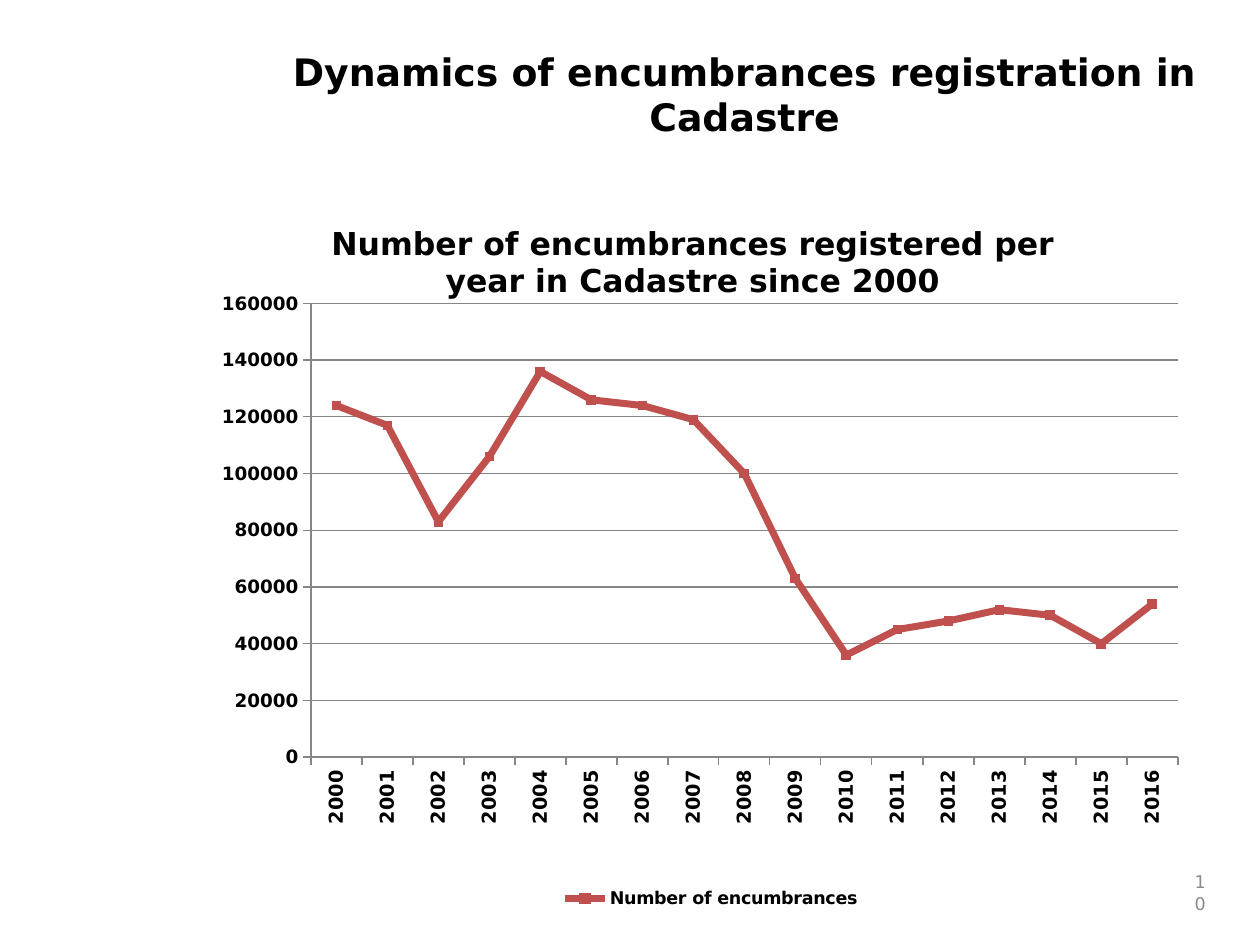
import pptx
import pptx.chart.data
import pptx.dml.color
import pptx.enum.chart
import pptx.enum.text
import pptx.oxml
import pptx.oxml.ns
import pptx.util

Pt = pptx.util.Pt
RGB = pptx.dml.color.RGBColor.from_string
PP = pptx.enum.text.PP_ALIGN
MSO = pptx.enum.text.MSO_ANCHOR
XL = pptx.enum.chart

TITLE = "Dynamics of encumbrances registration in Cadastre"
HEAD = "Number of encumbrances registered per year in Cadastre since 2000"
NAME = "Number of encumbrances"
PAGE = "10"
START = 2000
VALUES = [124000, 117000, 83000, 106000, 136000, 126000, 124000, 119000, 100000,
          63000, 36000, 45000, 48000, 52000, 50000, 40000, 54000]

SIZE = (720, 540)
BOXES = {"title": (124, 24, 603, 49), "page": (672, 498, 24, 24),
         "chart": (124, 120, 565, 402)}
PLOT = {"layoutTarget": "inner", "xMode": "edge", "yMode": "edge",
        "x": 0.095, "y": 0.133, "w": 0.877, "h": 0.645}
SPOT = {"xMode": "edge", "yMode": "edge", "x": 0.11, "y": 0.01}

THEME = {
    "font": "DejaVu Sans", "ink": "000000", "grey": "898989",
    "grid": "868686", "line": "C0504D",
    "title": 21.6, "head": 18, "cat": 11, "val": 10.5, "small": 10,
}


def assign(item, values):
    for key, value in values.items():
        setattr(item, key, value)


def style(font, size, color="ink", bold=True):
    assign(font, {"name": THEME["font"], "size": Pt(THEME[size]), "bold": bold})
    font.color.rgb = RGB(THEME[color])


def stroke(line, color, width):
    line.color.rgb = RGB(THEME[color])
    line.width = Pt(width)


def place(shape, box):
    assign(shape, dict(zip(("left", "top", "width", "height"), map(Pt, box))))


def write(shape, text, size, color, bold, align, anchor):
    frame = shape.text_frame
    frame.text = text
    assign(frame, {"word_wrap": True, "vertical_anchor": anchor,
                   "auto_size": pptx.enum.text.MSO_AUTO_SIZE.NONE})
    par = frame.paragraphs[0]
    par.alignment = align
    style(par.runs[0].font, size, color, bold)


def layout(parent, index, values):
    for old in parent.findall(pptx.oxml.ns.qn("c:layout")):
        parent.remove(old)
    body = "".join(f'<c:{key} val="{value}"/>' for key, value in values.items())
    parent.insert(index, pptx.oxml.parse_xml(
        f'<c:layout {pptx.oxml.ns.nsdecls("c")}>'
        f'<c:manualLayout>{body}</c:manualLayout></c:layout>'))


def draw(slide):
    data = pptx.chart.data.CategoryChartData()
    data.categories = [str(START + step) for step in range(len(VALUES))]
    data.add_series(NAME, VALUES)
    chart = slide.shapes.add_chart(XL.XL_CHART_TYPE.LINE_MARKERS,
                                   *map(Pt, BOXES["chart"]), data).chart
    style(chart.font, "small", bold=False)

    chart.has_title = True
    frame = chart.chart_title.text_frame
    frame.text = HEAD
    style(frame.paragraphs[0].runs[0].font, "head")
    title = chart.chart_title
    title.include_in_layout = False
    layout(title._element, 1, SPOT)
    layout(chart.plots[0]._element.getparent(), 0, PLOT)

    chart.has_legend = True
    assign(chart.legend, {"position": XL.XL_LEGEND_POSITION.BOTTOM,
                          "include_in_layout": False})
    style(chart.legend.font, "small")

    for axis, size in ((chart.category_axis, "cat"), (chart.value_axis, "val")):
        axis.major_tick_mark = XL.XL_TICK_MARK.OUTSIDE
        style(axis.tick_labels.font, size)
        stroke(axis.format.line, "grid", 0.75)
    chart.category_axis._element.txPr.bodyPr.set("rot", "-5400000")
    assign(chart.value_axis, {"minimum_scale": 0, "maximum_scale": 160000,
                              "major_unit": 20000, "has_major_gridlines": True})
    stroke(chart.value_axis.major_gridlines.format.line, "grid", 0.75)

    plot = chart.plots[0]
    plot.vary_by_categories = False
    line = plot.series[0]
    line.smooth = False
    stroke(line.format.line, "line", 4)
    assign(line.marker, {"style": XL.XL_MARKER_STYLE.SQUARE, "size": 5})
    line.marker.format.fill.solid()
    line.marker.format.fill.fore_color.rgb = RGB(THEME["line"])
    stroke(line.marker.format.line, "line", 0.75)


def main():
    deck = pptx.Presentation()
    assign(deck, dict(zip(("slide_width", "slide_height"), map(Pt, SIZE))))
    slide = deck.slides.add_slide(deck.slide_layouts[5])
    title = slide.shapes.title
    place(title, BOXES["title"])
    write(title, TITLE, "title", "ink", True, PP.CENTER, MSO.TOP)
    page = slide.shapes.add_textbox(*map(Pt, BOXES["page"]))
    write(page, PAGE, "small", "grey", False, PP.RIGHT, MSO.MIDDLE)
    draw(slide)
    deck.save("out.pptx")


if __name__ == "__main__":
    main()
